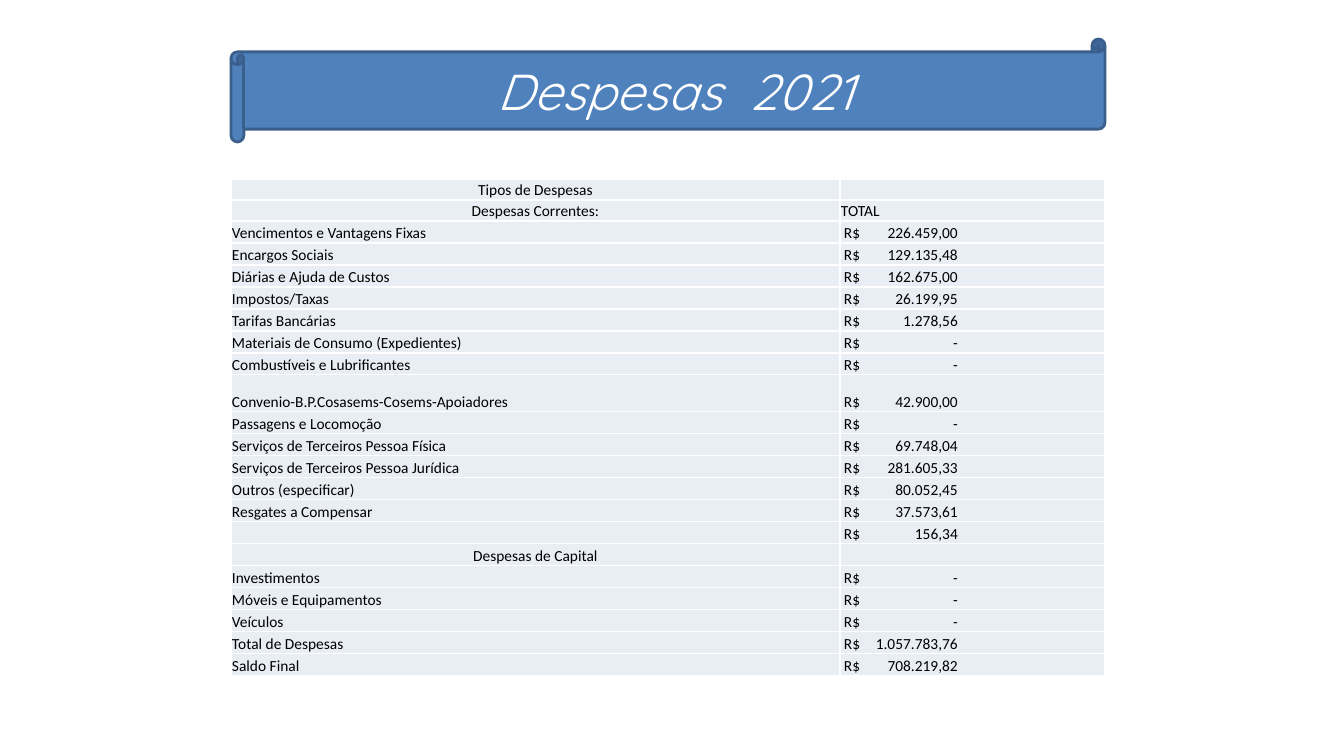
from lxml import etree
from pptx import Presentation
from pptx.dml.color import RGBColor
from pptx.enum.shapes import MSO_SHAPE
from pptx.enum.text import MSO_ANCHOR, PP_ALIGN
from pptx.oxml.ns import qn
from pptx.util import Pt

SCROLL = MSO_SHAPE.HORIZONTAL_SCROLL
MIDDLE, BOTTOM = MSO_ANCHOR.MIDDLE, MSO_ANCHOR.BOTTOM
LEFT, CENTER = PP_ALIGN.LEFT, PP_ALIGN.CENTER

BLUE = RGBColor(0x4F, 0x81, 0xBD)
DARK_BLUE = RGBColor(0x3A, 0x5F, 0x8C)
PALE = RGBColor(0xE9, 0xED, 0xF4)
WHITE = RGBColor(0xFF, 0xFF, 0xFF)
BLACK = RGBColor(0, 0, 0)

PX = 914400 / 100.8
TITLE_FONT = {"name": "Quicksand", "size": Pt(36), "italic": True}
CELL_FONT = {"name": "Calibri", "size": Pt(11), "bold": False}

HEADINGS = ("Tipos de Despesas", "Despesas Correntes:", "Despesas de Capital")
EXPENSES = [
    ("Tipos de Despesas", ""),
    ("Despesas Correntes:", "TOTAL"),
    ("Vencimentos e Vantagens Fixas", "226.459,00"),
    ("Encargos Sociais", "129.135,48"),
    ("Diárias e Ajuda de Custos", "162.675,00"),
    ("Impostos/Taxas", "26.199,95"),
    ("Tarifas Bancárias", "1.278,56"),
    ("Materiais de Consumo (Expedientes)", "-"),
    ("Combustíveis e Lubrificantes", "-"),
    ("Convenio-B.P.Cosasems-Cosems-Apoiadores", "42.900,00"),
    ("Passagens e Locomoção", "-"),
    ("Serviços de Terceiros Pessoa Física", "69.748,04"),
    ("Serviços de Terceiros Pessoa Jurídica", "281.605,33"),
    ("Outros (especificar)", "80.052,45"),
    ("Resgates a Compensar", "37.573,61"),
    ("", "156,34"),
    ("Despesas de Capital", ""),
    ("Investimentos", "-"),
    ("Móveis e Equipamentos", "-"),
    ("Veículos", "-"),
    ("Total de Despesas", "1.057.783,76"),
    ("Saldo Final", "708.219,82"),
]
ROW_HEIGHTS = {0: 21, 1: 21, 9: 37}


def px(length):
    return round(length * PX)


def format_font(font, values, color):
    for name, value in values.items():
        setattr(font, name, value)
    font.color.rgb = color


deck = Presentation()
deck.slide_width, deck.slide_height = px(1344), px(756)
page = deck.slides.add_slide(deck.slide_layouts[5])

scroll = page.shapes.add_shape(SCROLL, px(231), px(39), px(874), px(103))
scroll.shadow.inherit = False
scroll.fill.solid()
scroll.fill.fore_color.rgb = BLUE
scroll.line.color.rgb = DARK_BLUE
scroll.line.width = Pt(2)

title = page.shapes.title
title.left, title.top, title.width, title.height = px(244), px(52), px(862), px(77)
scroll.element.addnext(title.element)
frame = title.text_frame
frame.text = "Despesas  2021"
frame.word_wrap = True
frame.vertical_anchor = MIDDLE
frame.paragraphs[0].alignment = CENTER
format_font(frame.paragraphs[0].runs[0].font, TITLE_FONT, WHITE)

table = page.shapes.add_table(
    len(EXPENSES), 2, px(231), px(179), px(874), px(496)
).table
table.first_row = table.horz_banding = False
for column, width in zip(table.columns, (609, 265)):
    column.width = px(width)

for row, texts in enumerate(EXPENSES):
    table.rows[row].height = px(ROW_HEIGHTS.get(row, 22))
    for column, text in enumerate(texts):
        is_amount = column == 1 and text not in ("", "TOTAL")
        cell = table.cell(row, column)
        cell.margin_left = px(4 if is_amount else 1)
        cell.margin_right = cell.margin_top = px(1)
        cell.margin_bottom = 0
        cell.vertical_anchor = BOTTOM

        properties = cell._tc.get_or_add_tcPr()
        for side in ("a:lnL", "a:lnR", "a:lnT", "a:lnB"):
            border = etree.SubElement(properties, qn(side), w=str(Pt(1)))
            paint = etree.SubElement(border, qn("a:solidFill"))
            etree.SubElement(paint, qn("a:srgbClr"), val=str(WHITE))
        cell.fill.solid()
        cell.fill.fore_color.rgb = PALE

        para = cell.text_frame.paragraphs[0]
        para.alignment = CENTER if text in HEADINGS else LEFT
        if is_amount:
            tabs = etree.SubElement(para._p.get_or_add_pPr(), qn("a:tabLst"))
            etree.SubElement(tabs, qn("a:tab"), pos=str(px(114)), algn="r")
        if text:
            span = para.add_run()
            span.text = f"R$\t{text}" if is_amount else text
            format_font(span.font, CELL_FONT, BLACK)
        else:
            etree.SubElement(para._p, qn("a:endParaRPr"), sz="1100")

deck.save("out.pptx")
